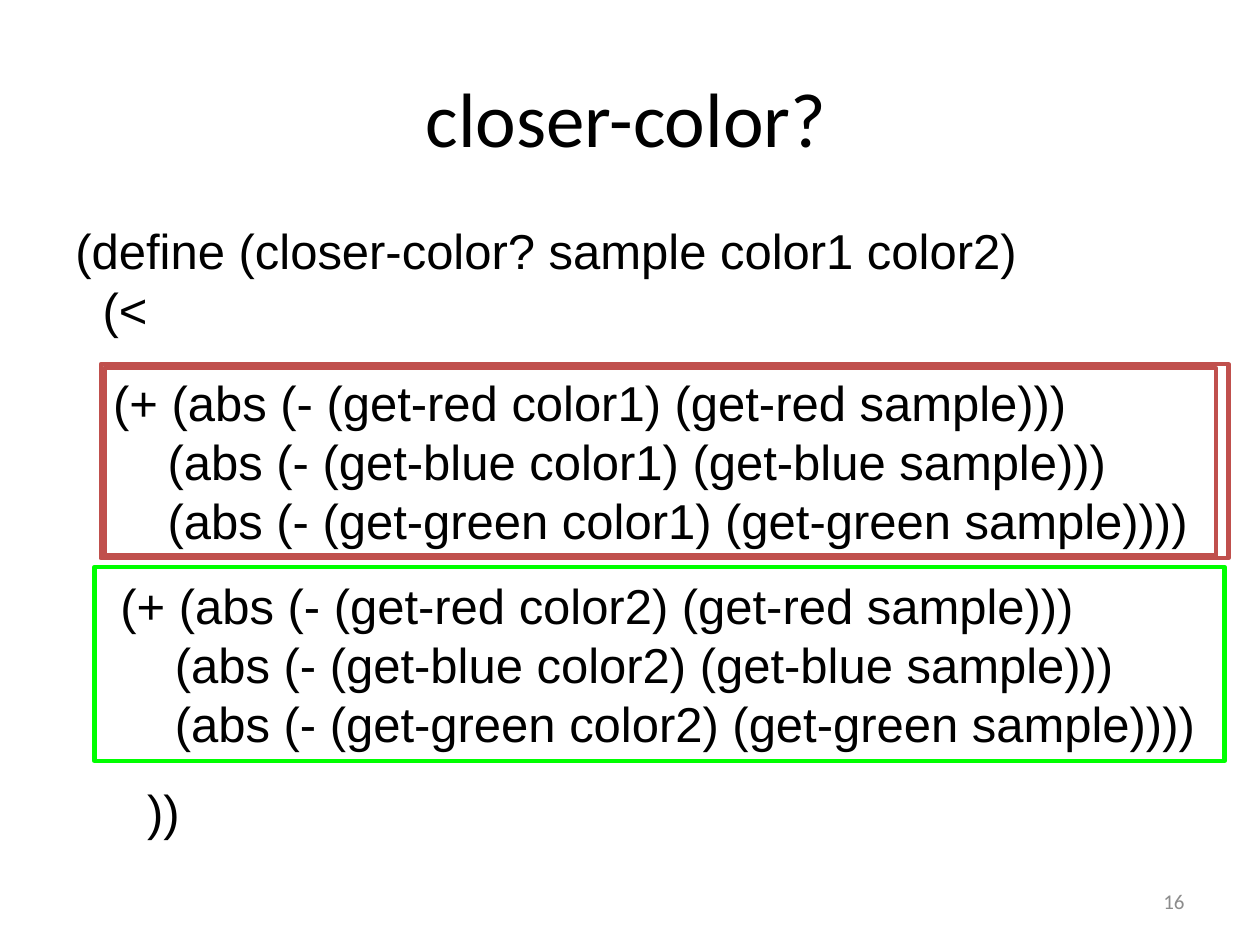
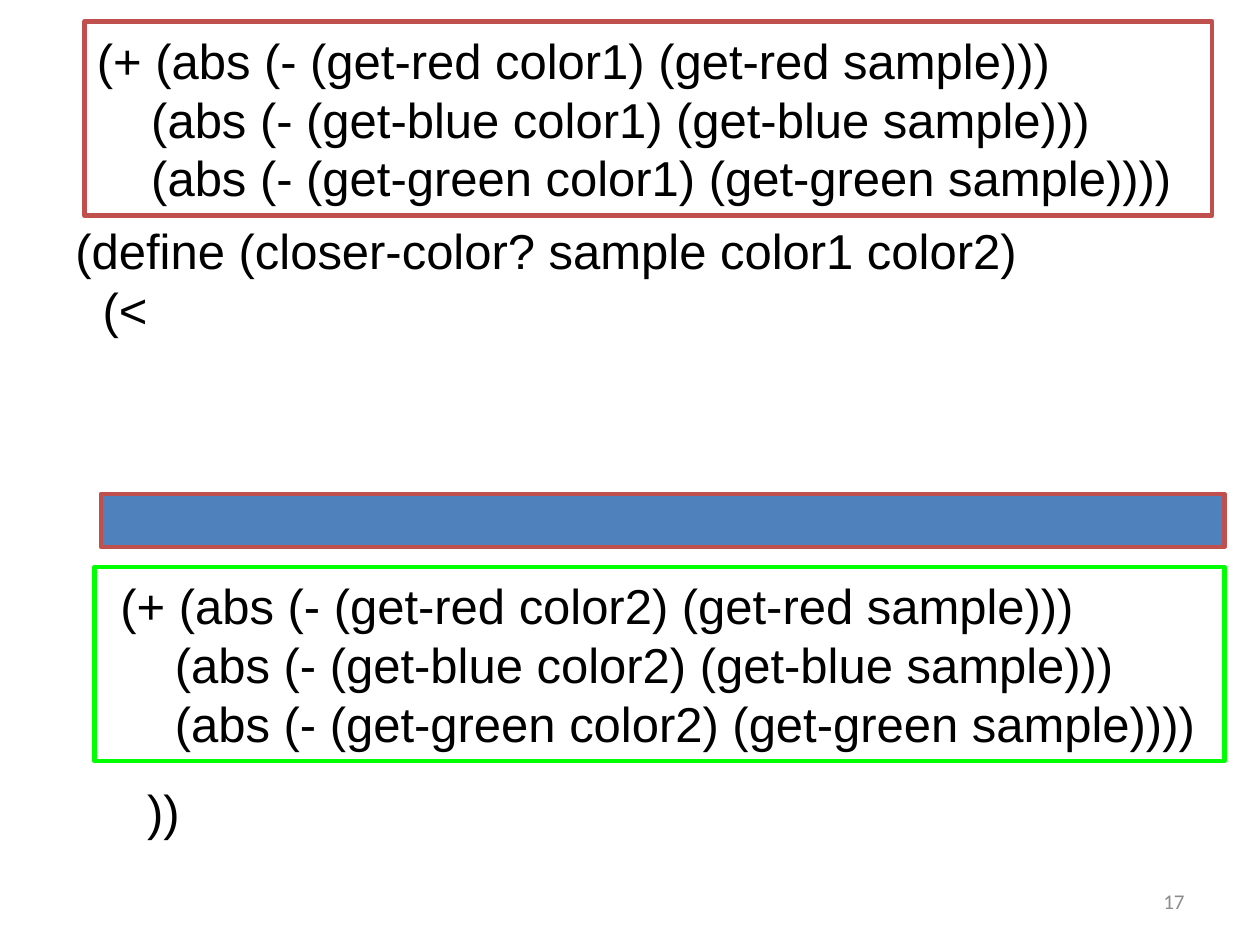
from pptx import Presentation
from pptx.dml.color import RGBColor
from pptx.enum.shapes import MSO_SHAPE as Shape
from pptx.enum.text import MSO_ANCHOR as Anchor, MSO_AUTO_SIZE as AutoSize, PP_ALIGN as Align
from pptx.util import Inches, Pt

COLORS = {"text": "000000", "number": "8C8C8C", "first": "C0504D",
          "second": "00FF00", "cover": "4F81BD"}
TITLE_ONLY, BLANK = 5, 6
SPACE = 0.108  # width of one code column, in inches

CODE = {"name": "Arial", "size": Pt(28)}
TITLE = {"name": "Calibri", "size": Pt(44)}
NUMBER = {"name": "Calibri", "size": Pt(12)}


def rgb(name):
    return RGBColor.from_string(COLORS[name])


def write(shape, lines, font, color="text", align=Align.LEFT, **frame_format):
    """Write (columns of indent, text) lines into a shape."""
    frame = shape.text_frame
    for name, value in ({"word_wrap": True} | frame_format).items():
        setattr(frame, name, value)
    for index, (columns, text) in enumerate(lines):
        paragraph = frame.add_paragraph() if index else frame.paragraphs[0]
        paragraph.alignment = align
        if columns:
            properties = paragraph._p.get_or_add_pPr()
            properties.set("marL", str(Inches(columns * SPACE)))
            properties.set("indent", "0")
        run = paragraph.add_run()
        run.text = text
        for name, value in font.items():
            setattr(run.font, name, value)
        run.font.color.rgb = rgb(color)


def add_text(slide, box, lines, font, **options):
    shape = slide.shapes.add_textbox(*map(Inches, box))
    write(shape, lines, font, **options)


def add_frame(slide, box, line, fill=None):
    shape = slide.shapes.add_shape(Shape.RECTANGLE, *map(Inches, box))
    shape.shadow.inherit = False
    if fill:
        shape.fill.solid()
        shape.fill.fore_color.rgb = rgb(fill)
    else:
        shape.fill.background()
    shape.line.color.rgb = rgb(line)
    shape.line.width = Pt(2.5)
    return shape


def add_distance(slide, box, color, line, indent=0):
    """Framed sum of the channel differences between a color and the sample."""
    lines = [(indent, f"(+ (abs (- (get-red {color}) (get-red sample)))"),
             (indent + 4, f"(abs (- (get-blue {color}) (get-blue sample)))"),
             (indent + 4, f"(abs (- (get-green {color}) (get-green sample))))")]
    write(add_frame(slide, box, line), lines, CODE,
          vertical_anchor=Anchor.MIDDLE, auto_size=AutoSize.SHAPE_TO_FIT_TEXT)


def add_first_distance(slide, left, top):
    add_distance(slide, (left, top, 8.95, 1.54), "color1", "first")


def add_title(slide, text):
    title = slide.shapes.title
    title.left, title.top, title.width, title.height = map(Inches, (0.25, 0.3, 9.58, 1.25))
    write(title, [(0, text)], TITLE, align=Align.CENTER, vertical_anchor=Anchor.MIDDLE)


def add_shared_parts(slide, number):
    """Definition, second distance, closing brackets and slide number."""
    add_distance(slide, (0.75, 4.5, 8.97, 1.54), "color2", "second", indent=1)
    add_text(slide, (0.5, 1.7, 8.25, 1.03),
             [(0, "(define (closer-color? sample color1 color2)"), (2, "(<")], CODE)
    add_text(slide, (1.07, 6.15, 0.46, 0.57), [(0, "))")], CODE, word_wrap=False)
    add_text(slide, (7.17, 6.95, 2.33, 0.4), [(0, str(number))], NUMBER,
             color="number", align=Align.RIGHT, vertical_anchor=Anchor.MIDDLE)


def main():
    presentation = Presentation()
    presentation.slide_width, presentation.slide_height = Inches(10), Inches(7.5)
    layouts = presentation.slide_layouts

    # Whole function, both distances in place
    slide = presentation.slides.add_slide(layouts[TITLE_ONLY])
    add_title(slide, "closer-color? ")
    add_first_distance(slide, 0.8, 2.89)
    add_shared_parts(slide, 16)
    add_frame(slide, (0.83, 2.92, 8.82, 1.49), "first")

    # First distance lifted out, a bar left in its place
    slide = presentation.slides.add_slide(layouts[BLANK])
    add_shared_parts(slide, 17)
    add_first_distance(slide, 0.67, 0.17)
    add_frame(slide, (0.8, 3.92, 8.92, 0.42), "first", fill="cover")

    presentation.save("out.pptx")


if __name__ == "__main__":
    main()
